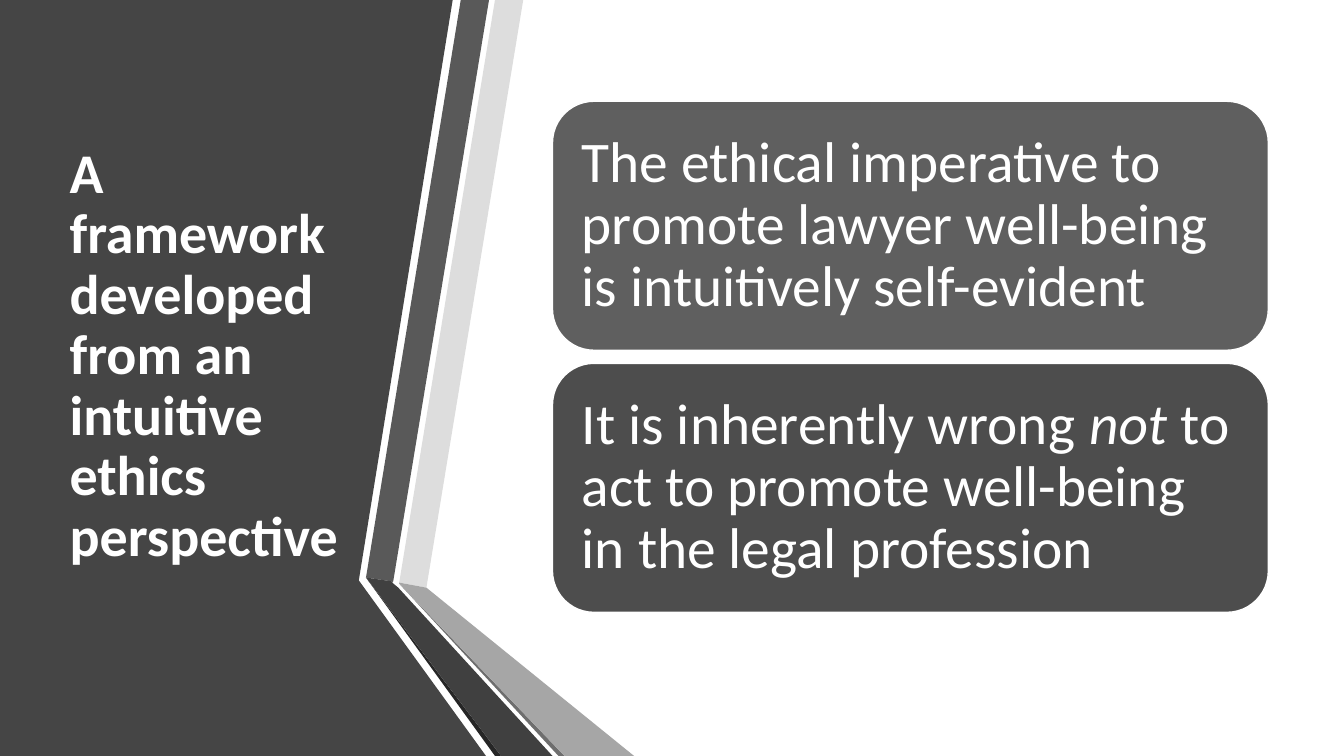
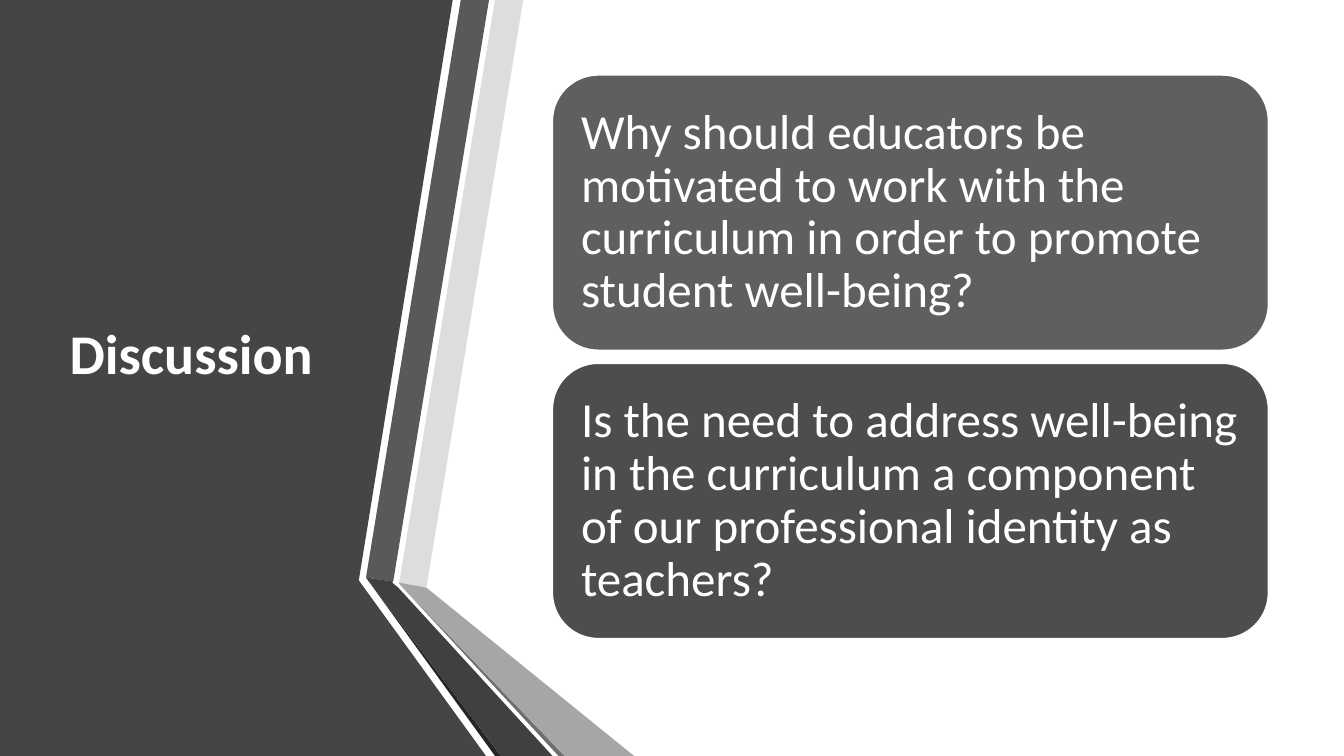
"""Build two slides with a folded side band, a title and two cards."""
from pptx import Presentation
from pptx.dml.color import RGBColor
from pptx.enum.shapes import MSO_SHAPE
from pptx.enum.text import MSO_ANCHOR, MSO_AUTO_SIZE, PP_ALIGN
from pptx.util import Inches, Pt

ROUND_RECT = MSO_SHAPE.ROUNDED_RECTANGLE
MIDDLE = MSO_ANCHOR.MIDDLE
NO_FIT = MSO_AUTO_SIZE.NONE
LEFT = PP_ALIGN.LEFT
FONT = "Calibri"
WHITE = "FFFFFF"
TITLE_ONLY = 5

SLIDES = [
    {
        "title": "A framework developed from an intuitive ethics perspective",
        "cards": [
            [("The ethical imperative to promote lawyer well-being is "
              "intuitively self-evident", False)],
            [("It is inherently wrong ", False), ("not", True),
             (" to act to promote well-being in the legal profession", False)],
        ],
        "height": 2.47, "size": 41, "inset": 0.17,
    },
    {
        "title": "Discussion",
        "cards": [
            [("Why should educators be motivated to work with the curriculum "
              "in order to promote student well-being?", False)],
            [("Is the need to address well-being in the curriculum a component "
              "of our professional identity as teachers?", False)],
        ],
        "height": 2.73, "size": 35, "inset": 0.15,
    },
]

BANDS = [
    ("454545", [(0, 0), (4.49, 0), (3.56, 5.75), (3.56, 5.76), (4.82, 7.5), (0, 7.5)]),
    ("DDDDDD", [(3.96, 5.78), (4.23, 5.83), (5.19, 0), (4.91, 0)]),
    ("595959", [(4.85, 0), (4.57, 0), (3.63, 5.73), (3.9, 5.77)]),
    ("262626", [(3.63, 5.73), (4.91, 7.5), (4.97, 7.5)]),
    ("6E6E6E", [(3.96, 5.79), (5.54, 7.5), (5.6, 7.5)]),
    ("A6A6A6", [(3.96, 5.79), (5.6, 7.5), (6.29, 7.5), (4.23, 5.83), (3.96, 5.78)]),
    ("404040", [(5.48, 7.5), (3.95, 5.83), (3.89, 5.78), (3.9, 5.77),
                (3.63, 5.73), (4.97, 7.5)]),
]

TITLE_BOX = (0.59, 0.75, 3.04, 5.58)
CARD_COLORS = ["5F5F5F", "4D4D4D"]
CARD_LEFT, CARD_WIDTH, CARD_GAP = 5.48, 7.1, 0.13
CARDS_MIDDLE = 3.54


def rgb(color):
    """Turn a hex string into a colour."""
    return RGBColor.from_string(color)


def write(shape, runs, size, bold=False, inset=None):
    """Write (text, italic) runs as one left-aligned, centred-height paragraph."""
    tf = shape.text_frame
    tf.word_wrap = True
    tf.auto_size = NO_FIT
    tf.vertical_anchor = MIDDLE
    if inset is not None:
        tf.margin_left = tf.margin_right = Inches(inset)
        tf.margin_top = tf.margin_bottom = Inches(inset)
    p = tf.paragraphs[0]
    p.alignment = LEFT
    p.line_spacing = 0.9
    for text, italic in runs:
        r = p.add_run()
        r.text = text
        r.font.name = FONT
        r.font.size = Pt(size)
        r.font.bold = bold
        r.font.italic = italic
        r.font.color.rgb = rgb(WHITE)


def paint(shape, color):
    """Give a shape a flat fill and no shadow."""
    shape.shadow.inherit = False
    shape.fill.solid()
    shape.fill.fore_color.rgb = rgb(color)


def add_bands(s):
    """Draw the folded bands at the left."""
    for color, corners in BANDS:
        points = [(Inches(x), Inches(y)) for x, y in corners]
        builder = s.shapes.build_freeform(*points[0])
        builder.add_line_segments(points[1:], close=True)
        band = builder.convert_to_shape()
        paint(band, color)
        band.line.fill.background()


def add_title(s, text):
    """Fill the title placeholder and bring it in front of the bands."""
    title = s.shapes.title
    title.left, title.top, title.width, title.height = map(Inches, TITLE_BOX)
    write(title, [(text, False)], 40, bold=True)
    s.shapes._spTree.append(title._element)


def add_cards(s, cards, height, size, inset):
    """Stack the cards evenly around their common middle."""
    step = height + CARD_GAP
    top = CARDS_MIDDLE - (len(cards) * step - CARD_GAP) / 2
    for i, (runs, color) in enumerate(zip(cards, CARD_COLORS)):
        card = s.shapes.add_shape(ROUND_RECT, Inches(CARD_LEFT), Inches(top + i * step),
                                  Inches(CARD_WIDTH), Inches(height))
        paint(card, color)
        card.line.color.rgb = rgb(WHITE)
        card.line.width = Pt(1)
        write(card, runs, size, inset=inset)


def main():
    """Build and save the presentation."""
    prs = Presentation()
    prs.slide_width, prs.slide_height = Inches(13.33), Inches(7.5)
    for content in SLIDES:
        s = prs.slides.add_slide(prs.slide_layouts[TITLE_ONLY])
        add_bands(s)
        add_title(s, content["title"])
        add_cards(s, content["cards"], content["height"], content["size"], content["inset"])
    prs.save("out.pptx")


if __name__ == "__main__":
    main()
